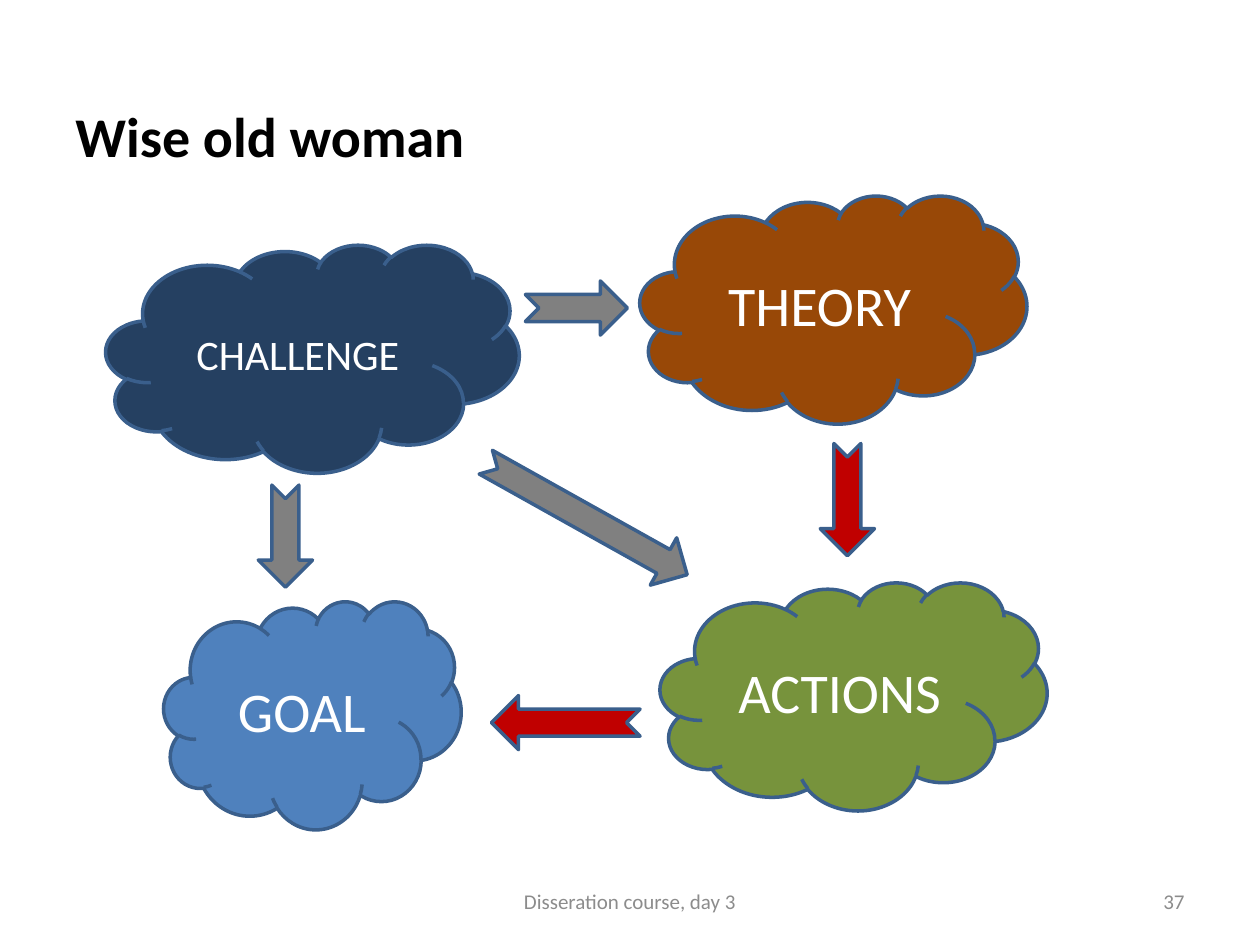
from pptx import Presentation
from pptx.dml.color import RGBColor
from pptx.enum.shapes import MSO_SHAPE
from pptx.enum.text import MSO_ANCHOR, PP_ALIGN
from pptx.util import Inches, Pt

CLOUD, ARROW = MSO_SHAPE.CLOUD, MSO_SHAPE.NOTCHED_RIGHT_ARROW
LEFT, MID, RIGHT = PP_ALIGN.LEFT, PP_ALIGN.CENTER, PP_ALIGN.RIGHT
TOP, CENTER = MSO_ANCHOR.TOP, MSO_ANCHOR.MIDDLE

BLACK = RGBColor(0x00, 0x00, 0x00)
WHITE = RGBColor(0xFF, 0xFF, 0xFF)
MUTED = RGBColor(0x8C, 0x8C, 0x8C)
EDGE = RGBColor(0x3A, 0x5F, 0x8C)
NAVY = RGBColor(0x25, 0x40, 0x61)
BROWN = RGBColor(0x98, 0x48, 0x07)
GREEN = RGBColor(0x77, 0x93, 0x3C)
BLUE = RGBColor(0x4F, 0x81, 0xBD)
GRAY = RGBColor(0x80, 0x80, 0x80)
RED = RGBColor(0xC0, 0x00, 0x00)

THICK = 0.43  # arrow height

# label, left, top, width, fill, text size
CLOUDS = [
    ("GOAL", 1.3, 3.22, 2.36, BLUE, 32),
    ("ACTIONS", 5.24, 3.07, 3.07, GREEN, 32),
    ("THEORY", 5.08, 0, 3.07, BROWN, 32),
    ("CHALLENGE", 0.84, 0.39, 3.28, NAVY, 24),
]
# left, top, length, turn, fill
ARROWS = [
    (3.9, 3.97, 1.18, 180, RED),
    (6.28, 2.2, 0.89, 90, RED),
    (4.17, 0.68, 0.81, 0, GRAY),
    (3.74, 2.35, 1.83, 29.2, GRAY),
    (1.86, 2.49, 0.81, 90, GRAY),
]


def write(frame, text, size, color, align, anchor, bold=False):
    frame.word_wrap = True
    frame.vertical_anchor = anchor
    para = frame.paragraphs[0]
    para.alignment = align
    run = para.add_run()
    run.text = text
    font = run.font
    font.name, font.size, font.bold = "Calibri", Pt(size), bold
    font.color.rgb = color


def add_text(slide, box, *style, **more):
    shape = slide.shapes.add_textbox(*map(Inches, box))
    write(shape.text_frame, *style, **more)


def add_form(slide, kind, box, fill):
    shape = slide.shapes.add_shape(kind, *map(Inches, box))
    shape.shadow.inherit = False
    shape.fill.solid()
    shape.fill.fore_color.rgb = fill
    shape.line.color.rgb = EDGE
    shape.line.width = Pt(2)
    return shape


def add_title(slide, box):
    add_text(slide, box, "Wise old woman", 32, BLACK, LEFT, TOP, bold=True)


def add_map(slide, left, top):
    # Clouds
    for label, x, y, width, fill, size in CLOUDS:
        cloud = add_form(slide, CLOUD, (left + x, top + y, width, 1.81), fill)
        write(cloud.text_frame, label, size, WHITE, MID, CENTER)
    # Arrows between the clouds
    for x, y, length, turn, fill in ARROWS:
        arrow = add_form(slide, ARROW, (left + x, top + y, length, THICK), fill)
        arrow.rotation = turn


def add_footer(slide, left, top, width, height):
    add_text(slide, (left + width - 2.33, top, 2.33, height),
             "37", 12, MUTED, RIGHT, CENTER)
    add_text(slide, (left + (width - 3.17) / 2, top, 3.17, height),
             "Disseration course, day 3", 12, MUTED, MID, CENTER)


def main():
    deck = Presentation()
    deck.slide_width, deck.slide_height = Inches(10), Inches(7.5)
    slide = deck.slides.add_slide(deck.slide_layouts[6])
    add_title(slide, (0.5, 0.76, 9, 0.79))
    add_map(slide, 0, 1.55)
    add_footer(slide, 0.5, 6.95, 9, 0.4)
    deck.save("out.pptx")


if __name__ == "__main__":
    main()
